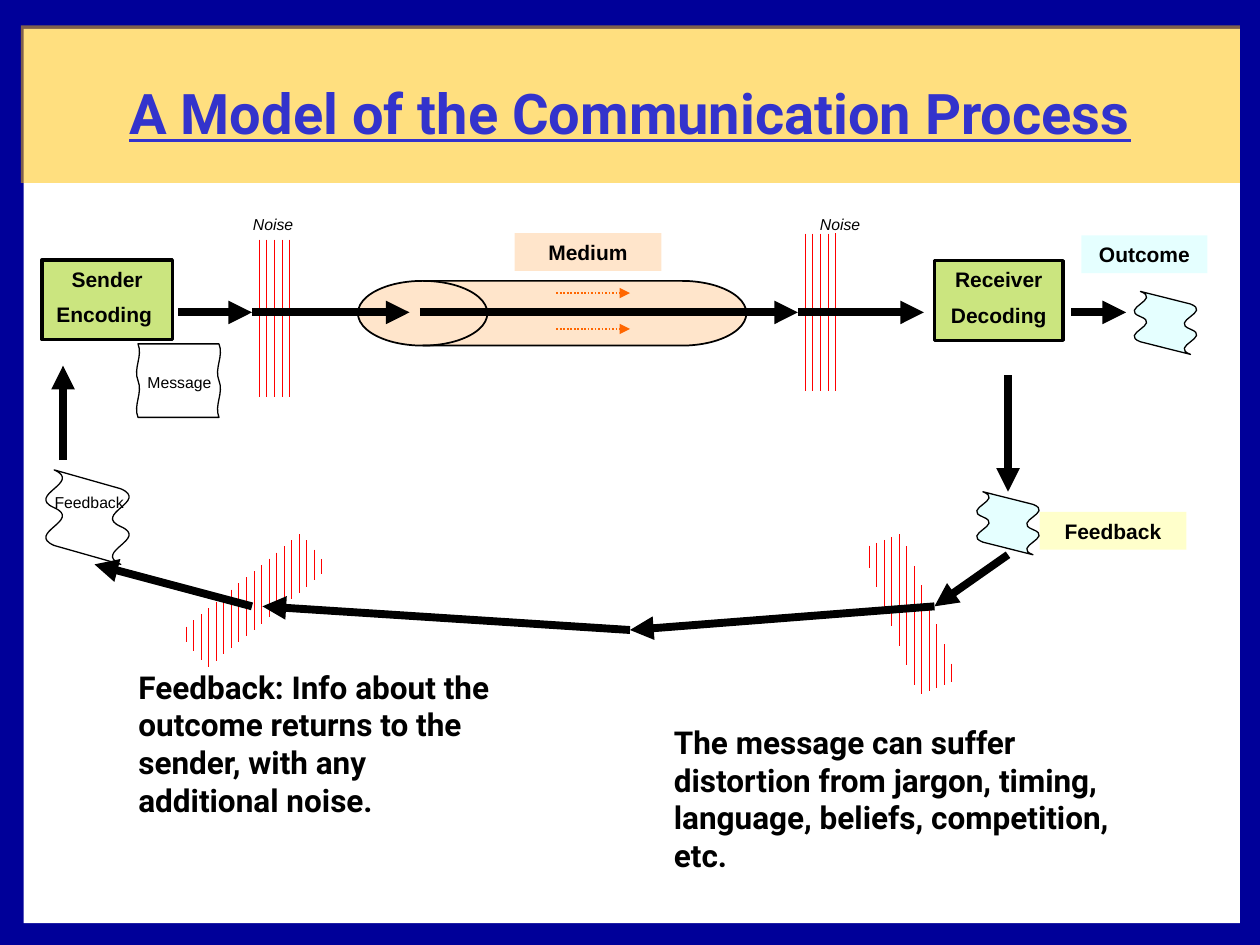
from lxml.etree import SubElement
from pptx import Presentation
from pptx.dml.color import RGBColor
from pptx.enum.dml import MSO_LINE, MSO_PATTERN
from pptx.enum.shapes import MSO_CONNECTOR, MSO_SHAPE
from pptx.enum.text import MSO_ANCHOR, PP_ALIGN
from pptx.oxml.ns import qn
from pptx.util import Pt

BLACK, WHITE, RED, ORANGE = "000000", "FFFFFF", "FF0000", "FF6600"
PALE_CYAN, PEACH = "CCFFFF", "FFCC99"

LABEL = {"name": "Arial", "size": Pt(12), "bold": True}
CAPTION = {"name": "Arial", "size": Pt(9)}
NOISE = {**CAPTION, "italic": True}
BODY = {"name": "Roboto", "size": Pt(18), "bold": True}
TITLE = {"name": "Roboto", "size": Pt(32), "bold": True, "underline": True}


def color(hex_string):
    return RGBColor.from_string(hex_string)


def write(shape, lines, font, ink=BLACK, align=PP_ALIGN.CENTER):
    frame = shape.text_frame
    frame.word_wrap = True
    frame.vertical_anchor = MSO_ANCHOR.TOP
    for index, line in enumerate(lines):
        para = frame.add_paragraph() if index else frame.paragraphs[0]
        para.alignment = align
        if index:
            para.space_before = Pt(font["size"].pt / 2)
        span = para.add_run()
        span.text = line
        for name, value in font.items():
            setattr(span.font, name, value)
        span.font.color.rgb = color(ink)


def add_text(page, place, text, font, ink=BLACK, align=PP_ALIGN.CENTER):
    box = page.shapes.add_textbox(*map(Pt, place))
    write(box, [text], font, ink, align)


def add_plain(page, kind, place, rotation=0):
    shape = page.shapes.add_shape(kind, *map(Pt, place))
    shape.shadow.inherit = False
    shape.rotation = rotation
    shape.line.fill.background()
    return shape


def add_filled(page, kind, place, fill, alpha=50, outline=0, rotation=0):
    shape = add_plain(page, kind, place, rotation)
    shape.fill.solid()
    shape.fill.fore_color.rgb = color(fill)
    if alpha < 100:
        tint = shape.fill._xPr.find(qn("a:solidFill"))[0]
        SubElement(tint, qn("a:alpha"), val=str(alpha * 1000))
    if outline:
        shape.line.color.rgb = color(BLACK)
        shape.line.width = Pt(outline)
    return shape


def add_box(page, place, lines, fill, outline=0):
    box = add_filled(page, MSO_SHAPE.RECTANGLE, place, fill, outline=outline)
    write(box, lines, LABEL)


def add_noise(page, place, rotation):
    strip = add_plain(page, MSO_SHAPE.RECTANGLE, place, rotation)
    strip.fill.patterned()
    strip.fill.pattern = MSO_PATTERN.DASHED_VERTICAL
    strip.fill.fore_color.rgb = color(RED)
    strip.fill.back_color.rgb = color(WHITE)


def add_wave(page, place, fill, alpha, bends=(0.103, -0.1)):
    wave = add_filled(page, MSO_SHAPE.DOUBLE_WAVE, place, fill, alpha, 0.75, 270)
    for index, bend in enumerate(bends):
        wave.adjustments[index] = bend


def add_arrow(page, start, end, ink=BLACK, width=4.5, dash=None):
    arrow = page.shapes.add_connector(
        MSO_CONNECTOR.STRAIGHT, *map(Pt, (*start, *end)))
    for name, value in {"width": Pt(width), "dash_style": dash}.items():
        setattr(arrow.line, name, value)
    arrow.line.color.rgb = color(ink)
    SubElement(arrow.line._get_or_add_ln(), qn("a:tailEnd"), type="triangle")
    SubElement(arrow._element.spPr, qn("a:effectLst"))


def add_frame(page):
    for place, fill, alpha in (
        ((0, 0, 720, 540), "000099", 100),
        ((13.5, 16.5, 695, 511), WHITE, 100),
        ((12, 14.5, 696.5, 90), "FFC000", 50),
    ):
        add_filled(page, MSO_SHAPE.RECTANGLE, place, fill, alpha)
    add_text(page, (36.5, 41.5, 647, 46),
             "A Model of the Communication Process", TITLE, "3333CC")


def add_channel(page):
    for place, rotation in (
        ((144, 137, 24, 90), 359.8),
        ((456, 133.5, 24, 90), 359.8),
        ((132, 298, 26, 90), 230.7),
        ((507.5, 306, 24.5, 90), 158.9),
    ):
        add_noise(page, place, rotation)
    for left in (132, 456):
        add_text(page, (left, 119, 48, 18), "Noise", NOISE)
    add_filled(page, MSO_SHAPE.FLOWCHART_DIRECT_ACCESS_STORAGE,
               (204.5, 160.5, 222, 37), PEACH, outline=1, rotation=180)


def add_stations(page):
    for place, lines, fill, outline in (
        ((24, 148.5, 74.5, 45.5), ["Sender", "Encoding "], "99CC00", 2),
        ((534, 149, 73.5, 45.5), ["Receiver", "Decoding"], "99CC00", 2),
        ((294, 133.2, 84, 21.6), ["Medium"], PEACH, 0),
        ((618, 134.6, 72, 21.6), ["Outcome"], PALE_CYAN, 0),
        ((594, 292.6, 84, 21.6), ["Feedback"], "FFFF99", 0),
    ):
        add_box(page, place, lines, fill, outline)


def add_messages(page):
    for place in ((648, 166.5, 36, 36), (558, 281, 36, 36)):
        add_wave(page, place, PALE_CYAN, 50)
    add_wave(page, (23, 271.5, 54, 48), WHITE, 100)
    add_wave(page, (81, 193.5, 42, 48), WHITE, 100, (0.018, 0))
    add_text(page, (18, 278, 66, 18), "Feedback", CAPTION)
    add_text(page, (75.5, 209.5, 54, 18), "Message", CAPTION)


def add_flow(page):
    axis = 178.5
    for start, end in ((102, 144), (144, 234), (240, 456), (456, 528), (612, 643.5)):
        add_arrow(page, (start, axis), (end, axis))
    for height in (167.5, 188):
        add_arrow(page, (318, height), (360, height), ORANGE, 1, MSO_LINE.ROUND_DOT)
    for start, end in (
        ((576, 214.5), (576, 281)),
        ((576, 317), (534, 346.5)),
        ((534, 346.5), (360, 360)),
        ((360, 360), (150, 346.5)),
        ((144, 346.5), (54, 322.5)),
        ((36, 263), (36, 209)),
    ):
        add_arrow(page, start, end)


def add_notes(page):
    for place, text in (
        ((72, 378, 216, 94.5), "Feedback: Info about the outcome returns to the "
                               "sender, with any additional noise."),
        ((378, 409.5, 264, 94.5), "The message can suffer distortion from jargon, "
                                  "timing, language, beliefs, competition, etc."),
    ):
        add_text(page, place, text, BODY, align=PP_ALIGN.LEFT)


def main():
    deck = Presentation()
    deck.slide_width, deck.slide_height = Pt(720), Pt(540)
    page = deck.slides.add_slide(deck.slide_layouts[6])
    for add_part in (add_frame, add_channel, add_stations,
                     add_messages, add_flow, add_notes):
        add_part(page)
    deck.save("out.pptx")


if __name__ == "__main__":
    main()
